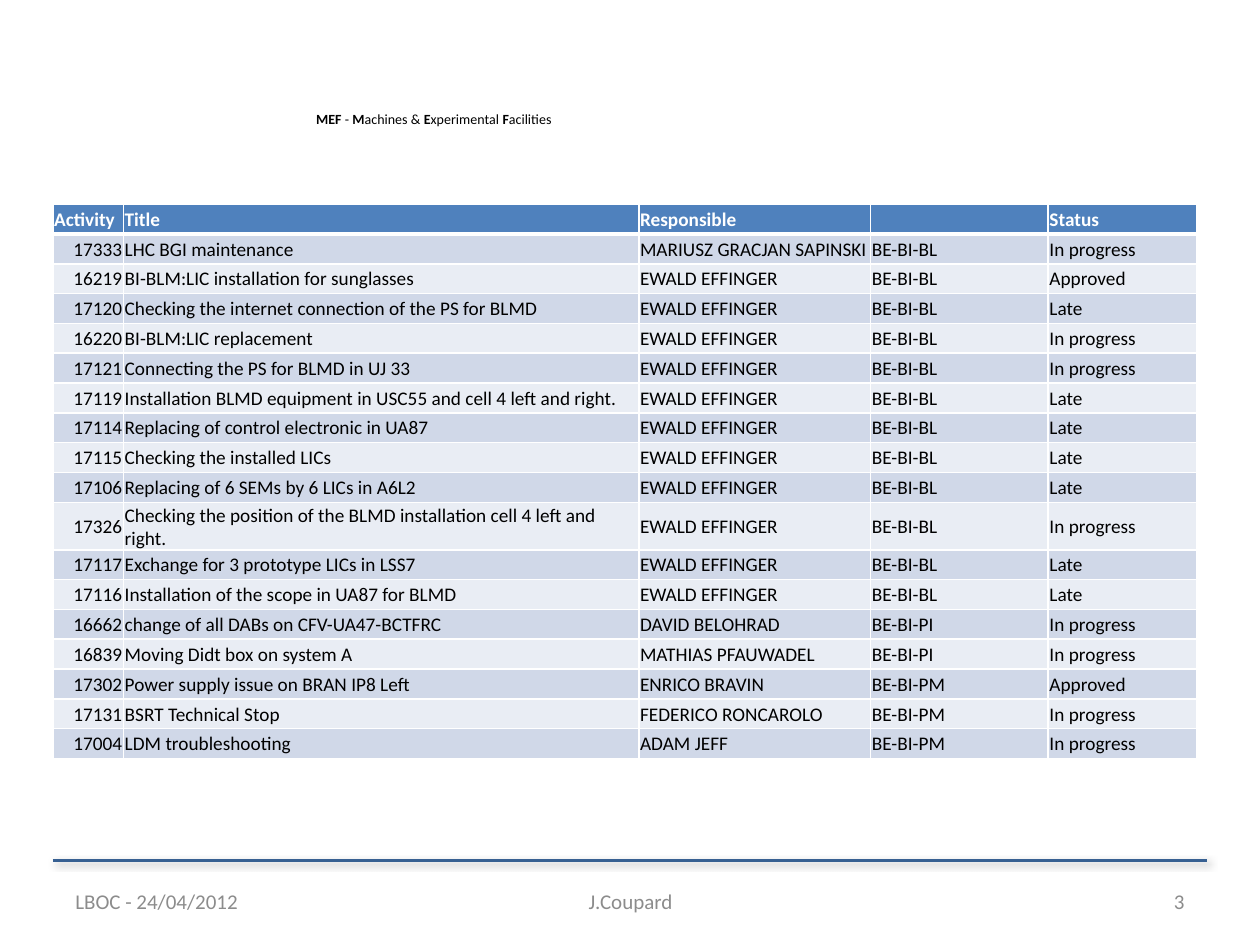
from lxml import etree
from pptx import Presentation
from pptx import util as u
from pptx.dml.color import RGBColor
from pptx.enum import shapes, text
from pptx.oxml import ns

COLORS = {
    "rule": "376092", "header": "4F81BD", "odd": "D0D8E8", "even": "E9EDF4",
    "white": "FFFFFF", "black": "000000", "footer": "8C8C8C",
}
FONT = "Calibri"
LEFT, CENTER, RIGHT = text.PP_ALIGN.LEFT, text.PP_ALIGN.CENTER, text.PP_ALIGN.RIGHT

HEADINGS = ("Activity", "Title", "Responsible", "", "Status")
COLUMN_WIDTHS = (0.56, 4.09, 1.84, 1.41, 1.18)
EFFINGER = "EWALD EFFINGER"
ACTIVITIES = [
    ("17333", "LHC BGI maintenance", "MARIUSZ GRACJAN SAPINSKI", "BE-BI-BL", "In progress"),
    ("16219", "BI-BLM:LIC installation for sunglasses", EFFINGER, "BE-BI-BL", "Approved"),
    ("17120", "Checking the internet connection of the PS for BLMD", EFFINGER, "BE-BI-BL", "Late"),
    ("16220", "BI-BLM:LIC replacement", EFFINGER, "BE-BI-BL", "In progress"),
    ("17121", "Connecting the PS for BLMD in UJ 33", EFFINGER, "BE-BI-BL", "In progress"),
    ("17119", "Installation BLMD equipment in USC55 and cell 4 left and right.",
     EFFINGER, "BE-BI-BL", "Late"),
    ("17114", "Replacing of control electronic in UA87", EFFINGER, "BE-BI-BL", "Late"),
    ("17115", "Checking the installed LICs", EFFINGER, "BE-BI-BL", "Late"),
    ("17106", "Replacing of 6 SEMs by 6 LICs in A6L2", EFFINGER, "BE-BI-BL", "Late"),
    ("17326", "Checking the position of the BLMD installation cell 4 left and right.",
     EFFINGER, "BE-BI-BL", "In progress"),
    ("17117", "Exchange for 3 prototype LICs in LSS7", EFFINGER, "BE-BI-BL", "Late"),
    ("17116", "Installation of the scope in UA87 for BLMD", EFFINGER, "BE-BI-BL", "Late"),
    ("16662", "change of all DABs on CFV-UA47-BCTFRC", "DAVID BELOHRAD", "BE-BI-PI", "In progress"),
    ("16839", "Moving Didt box on system A", "MATHIAS PFAUWADEL", "BE-BI-PI", "In progress"),
    ("17302", "Power supply issue on BRAN IP8 Left", "ENRICO BRAVIN", "BE-BI-PM", "Approved"),
    ("17131", "BSRT Technical Stop", "FEDERICO RONCAROLO", "BE-BI-PM", "In progress"),
    ("17004", "LDM troubleshooting", "ADAM JEFF", "BE-BI-PM", "In progress"),
]
DEPARTMENT = [
    ("MEF ", True), ("- ", False), ("M", True), ("achines & ", False),
    ("E", True), ("xperimental ", False), ("F", True), ("acilities", False),
]


def rgb(name):
    """Return the named colour."""
    return RGBColor.from_string(COLORS[name])


def child(parent, tag, **attributes):
    """Append a drawing element and return it."""
    return etree.SubElement(parent, ns.qn(f"a:{tag}"), attributes)


def add_run(paragraph, wording, size, color, bold=False):
    """Add one formatted run to a paragraph."""
    run = paragraph.add_run()
    run.text = wording
    run.font.name = FONT
    run.font.size = u.Pt(size)
    run.font.bold = bold
    run.font.color.rgb = rgb(color)


def add_label(slide, box, runs, size, color, align=LEFT, wrap=True,
              anchor=text.MSO_ANCHOR.MIDDLE):
    """Place a one-line text box made of (wording, bold) runs."""
    frame = slide.shapes.add_textbox(*map(u.Inches, box)).text_frame
    frame.word_wrap = wrap
    frame.vertical_anchor = anchor
    frame.paragraphs[0].alignment = align
    for wording, bold in runs:
        add_run(frame.paragraphs[0], wording, size, color, bold)


def add_department(slide, box):
    """Place the department name above the table."""
    add_label(slide, box, DEPARTMENT, 8, "black", wrap=False, anchor=text.MSO_ANCHOR.TOP)


def add_footer(slide, box):
    """Place the shadowed rule and the three footer texts below it."""
    left, top, width, height = box
    rule = slide.shapes.add_connector(
        shapes.MSO_CONNECTOR.STRAIGHT,
        *map(u.Inches, (left, top, left + width, top)))
    rule.line.color.rgb = rgb("rule")
    rule.line.width = u.Pt(1.5)
    effects = child(rule._element.spPr, "effectLst")
    shadow = child(effects, "outerShdw", blurRad=str(u.Pt(4)), dist=str(u.Pt(2)),
                   dir="2700000", algn="tl", rotWithShape="0")
    child(child(shadow, "srgbClr", val=COLORS["black"]), "alpha", val="40000")

    text_height = 0.4
    for offset, label_width, wording, align in (
            (0.08, 2.33, "LBOC - 24/04/2012", LEFT),
            (3.0, 3.17, "J.Coupard", CENTER),
            (6.75, 2.33, "3", RIGHT)):
        label_box = (left + offset, top + height - text_height, label_width, text_height)
        add_label(slide, label_box, [(wording, False)], 12, "footer", align)


def format_cell(cell, wording, fill, color, bold, align, borders):
    """Fill one table cell; borders gives left, right, top and bottom points."""
    cell.margin_left = cell.margin_right = cell.margin_top = u.Inches(0.01)
    cell.margin_bottom = 0
    cell.vertical_anchor = text.MSO_ANCHOR.MIDDLE
    properties = cell._tc.get_or_add_tcPr()
    for side, points in zip("LRTB", borders):
        border = child(properties, f"ln{side}", w=str(u.Pt(points)))
        child(child(border, "solidFill"), "srgbClr", val=COLORS["white"])
    cell.fill.solid()
    cell.fill.fore_color.rgb = rgb(fill)
    paragraph = cell.text_frame.paragraphs[0]
    paragraph.alignment = align
    if wording:
        add_run(paragraph, wording, 11, color, bold)
    else:
        child(paragraph._p, "endParaRPr", sz="1100")


def add_activities(slide, box):
    """Place the banded table of activities."""
    rows = [HEADINGS, *ACTIVITIES]
    table = slide.shapes.add_table(
        len(rows), len(HEADINGS), *map(u.Inches, box)).table
    for column, width in zip(table.columns, COLUMN_WIDTHS):
        column.width = u.Inches(width)
    for r, row in enumerate(rows):
        header = r == 0
        fill = "header" if header else ("even", "odd")[r % 2]
        borders = (1, 1, 3 if r == 1 else 1, 3 if header else 1)
        for c, wording in enumerate(row):
            align = RIGHT if c == 0 and not header else LEFT
            format_cell(table.cell(r, c), wording, fill,
                        "white" if header else "black", header, align, borders)


def main():
    """Build and save the slide."""
    deck = Presentation()
    deck.slide_width, deck.slide_height = u.Inches(10), u.Inches(7.5)
    slide = deck.slides.add_slide(deck.slide_layouts[6])
    add_department(slide, (2.41, 0.83, 2.09, 0.24))
    add_footer(slide, (0.42, 6.83, 9.16, 0.52))
    add_activities(slide, (0.42, 1.62, 9.08, 4.26))
    deck.save("out.pptx")


if __name__ == "__main__":
    main()
